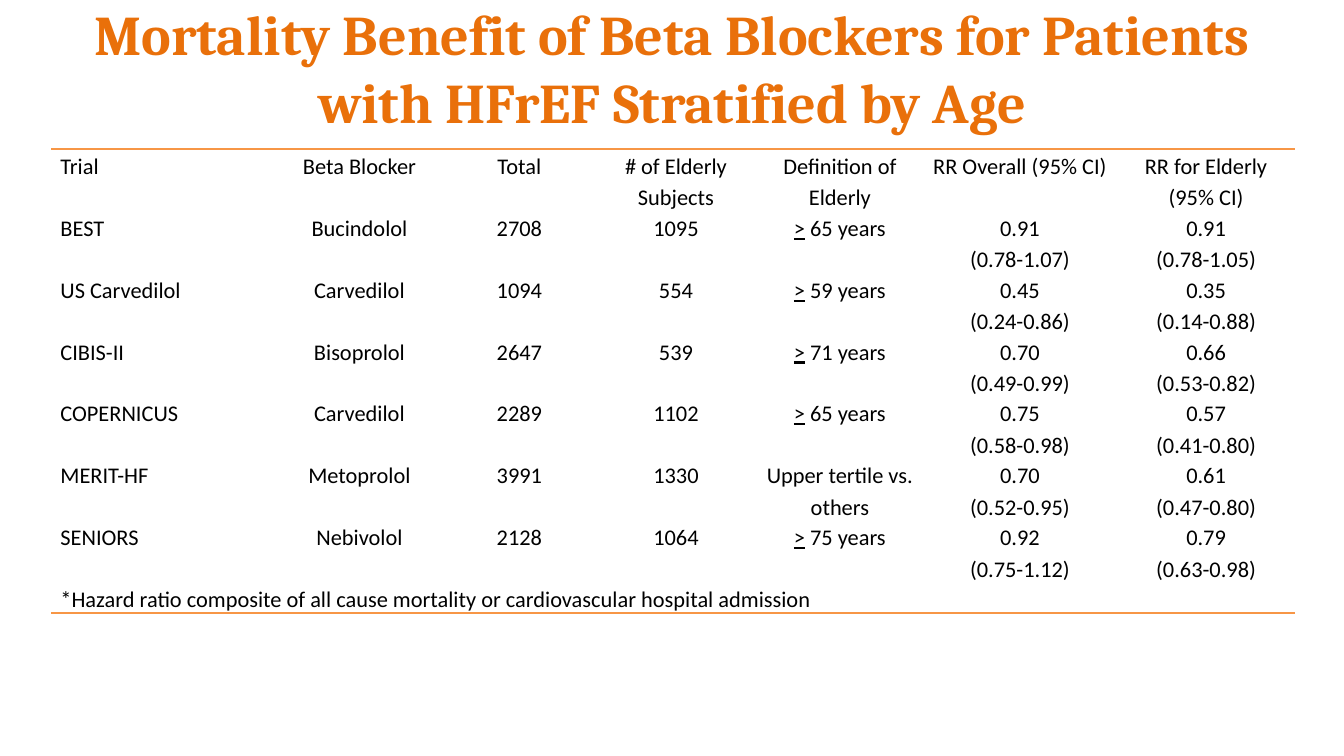
from dataclasses import dataclass

from lxml import etree
from pptx import Presentation
from pptx import util as u
from pptx.dml.color import RGBColor
from pptx.enum import text
from pptx.oxml.ns import qn


@dataclass(frozen=True)
class Theme:
    title_font: str = "Cambria"
    body_font: str = "Calibri"
    title_size: float = 30
    body_size: float = 12
    title_color: str = "E9700A"
    body_color: str = "000000"
    rule_color: str = "F79646"
    rule_width: float = 1
    line_spacing: float = 1.15


T = Theme()
W = 10
H = W * 9 / 16
NO_STYLE = "{2D5ABB26-0587-4C30-8999-92F81FD0307C}"
COLS = [1.67, 1.25, 1.13, 1.2, 1.24, 1.44, 1.33]
FOOT_ROW = 0.21

TITLE = "Mortality Benefit of Beta Blockers for Patients with HFrEF Stratified by Age"
HEADER = ["Trial", "Beta Blocker", "Total", "# of Elderly Subjects",
          "Definition of Elderly", "RR Overall (95% CI)", "RR for Elderly (95% CI)"]
TRIALS = [
    ["BEST", "Bucindolol", "2708", "1095", "> 65 years",
     "0.91\n(0.78-1.07)", "0.91\n(0.78-1.05)"],
    ["US Carvedilol", "Carvedilol", "1094", "554", "> 59 years",
     "0.45\n(0.24-0.86)", "0.35\n(0.14-0.88)"],
    ["CIBIS-II", "Bisoprolol", "2647", "539", "> 71 years",
     "0.70\n(0.49-0.99)", "0.66\n(0.53-0.82)"],
    ["COPERNICUS", "Carvedilol", "2289", "1102", "> 65 years",
     "0.75\n(0.58-0.98)", "0.57\n(0.41-0.80)"],
    ["MERIT-HF", "Metoprolol", "3991", "1330", "Upper tertile vs. others",
     "0.70\n(0.52-0.95)", "0.61\n(0.47-0.80)"],
    ["SENIORS", "Nebivolol", "2128", "1064", "> 75 years",
     "0.92\n(0.75-1.12)", "0.79\n(0.63-0.98)"],
]
FOOTNOTE = "*Hazard ratio composite of all cause mortality or cardiovascular hospital admission"
ROW = 3.1 / (1 + len(TRIALS))


def write(tf, content, font=T.body_font, size=T.body_size, color=T.body_color,
          bold=False, align=text.PP_ALIGN.CENTER, spacing=None):
    """One paragraph per line; a leading ">" is underlined to read as "at least"."""
    for i, line in enumerate(content.split("\n")):
        p = tf.paragraphs[0] if i == 0 else tf.add_paragraph()
        p.alignment = align
        if spacing:
            p.line_spacing = spacing
        parts = [(">", True), (line[1:], False)] if line.startswith(">") else [(line, False)]
        for words, underline in parts:
            r = p.add_run()
            r.text = words
            f = r.font
            f.name, f.size, f.bold = font, u.Pt(size), bold
            f.color.rgb = RGBColor.from_string(color)
            if underline:
                f.underline = True


def rule(cell, side):
    """Draw a cell border; side is "lnT" or "lnB"."""
    ln = etree.Element(qn(f"a:{side}"), w=str(u.Pt(T.rule_width)))
    fill = etree.SubElement(ln, qn("a:solidFill"))
    etree.SubElement(fill, qn("a:srgbClr"), val=T.rule_color)
    cell._tc.get_or_add_tcPr().insert(0, ln)


def add_title(s, x, y, w, h):
    tf = s.shapes.add_textbox(*map(u.Inches, (x, y, w, h))).text_frame
    tf.word_wrap = True
    tf.vertical_anchor = text.MSO_ANCHOR.MIDDLE
    write(tf, TITLE, font=T.title_font, size=T.title_size, color=T.title_color, bold=True)


def add_trials(s, x, y, w, h):
    rows = [HEADER, *TRIALS, [FOOTNOTE] + [""] * (len(COLS) - 1)]
    heights = [ROW] * (len(rows) - 1) + [FOOT_ROW]
    frame = s.shapes.add_table(len(rows), len(COLS), *map(u.Inches, (x, y, w, h)))
    tbl = frame.table
    tbl.first_row = tbl.horz_banding = False
    tbl._tbl.tblPr.find(qn("a:tableStyleId")).text = NO_STYLE

    # Grid: setting rows resizes the frame, so its height comes last
    for col, share in zip(tbl.columns, COLS):
        col.width = u.Inches(w * share / sum(COLS))
    for row, height in zip(tbl.rows, heights):
        row.height = u.Inches(height)
    frame.height = u.Inches(h)
    last = len(rows) - 1
    tbl.cell(last, 0).merge(tbl.cell(last, len(COLS) - 1))

    # Cells, with a rule above the header and below the footnote
    for i, values in enumerate(rows):
        for j, value in enumerate(values):
            cell = tbl.cell(i, j)
            cell.fill.background()
            cell.margin_left = cell.margin_right = u.Inches(0.07)
            cell.margin_top = cell.margin_bottom = 0
            if value:
                align = text.PP_ALIGN.CENTER if j else text.PP_ALIGN.LEFT
                write(cell.text_frame, value, align=align, spacing=T.line_spacing)
            if i in (0, last):
                rule(cell, "lnB" if i else "lnT")


def main():
    prs = Presentation()
    prs.slide_width, prs.slide_height = u.Inches(W), u.Inches(H)
    s = prs.slides.add_slide(prs.slide_layouts[6])
    add_title(s, 0.05 * W, 0.03, 0.9 * W, 0.94)
    add_trials(s, 0.38, 1.11, sum(COLS), 3.45)
    prs.save("out.pptx")


if __name__ == "__main__":
    main()
